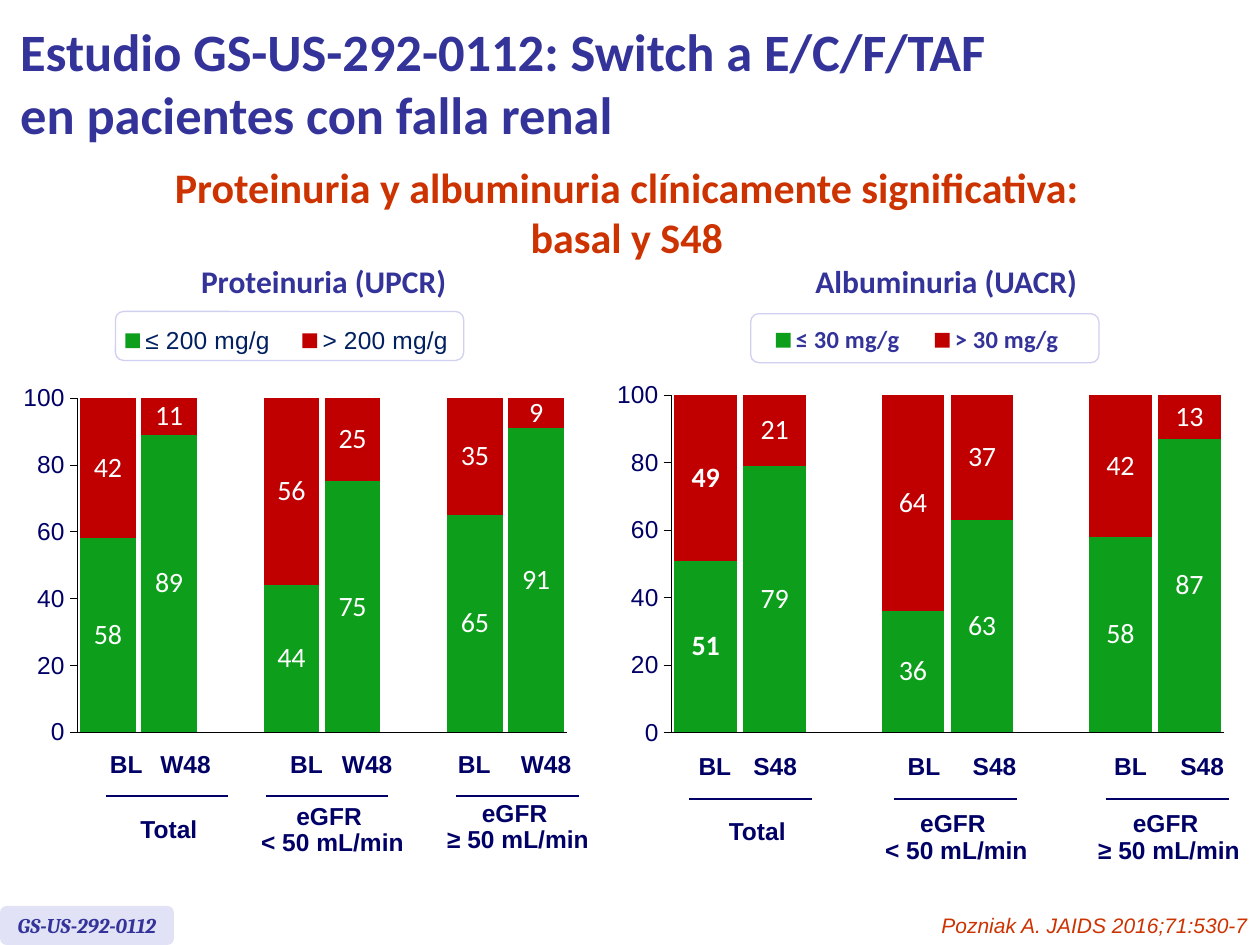
import pptx
import pptx.util
import pptx.chart.data
import pptx.dml.color
import pptx.enum.chart
import pptx.enum.shapes
import pptx.enum.text
import pptx.oxml
import pptx.oxml.ns

Pt = pptx.util.Pt
RGB = pptx.dml.color.RGBColor.from_string
ALIGN = pptx.enum.text.PP_ALIGN
MID = pptx.enum.text.MSO_ANCHOR.MIDDLE
TOP = pptx.enum.text.MSO_ANCHOR.TOP
XL = pptx.enum.chart
qn = pptx.oxml.ns.qn

HUES = {"blue": "333399", "navy": "000066", "deep": "002060", "red": "C00000",
        "green": "0D9F1B", "rust": "CC3300", "pale": "E2E2F6", "edge": "D0D0F0",
        "white": "FFFFFF", "black": "000000"}

# Content
TITLE = "Estudio GS-US-292-0112: Switch a E/C/F/TAF \ven pacientes con falla renal"
LEAD = "Proteinuria y albuminuria clínicamente significativa: basal y S48"
CODE = "GS-US-292-0112"
CITE = "Pozniak A. JAIDS 2016;71:530-7"
GROUPS = [["Total"], ["eGFR ", "< 50 mL/min"], ["eGFR ", "≥ 50 mL/min"]]

# One dict per panel; the x lists hold one place per patient group
PANELS = [
    dict(head="Proteinuria (UPCR)", head_box=(105, 152, 160, 20),
         frame=(66, 178, 199, 28), box=(9.4, 156.6, 321.8, 362.9),
         plot=(0.108, 0.195, 0.869, 0.527), key=(0.15, 0.07, 0.66, 0.07),
         key_font=dict(size=14, name="Arial", color="deep", bold=False),
         series=[("≤ 200 mg/g", "green", [58, 89, None, 44, 75, None, 65, 91]),
                 ("> 200 mg/g", "red", [42, 11, None, 56, 25, None, 35, 9])],
         bold=[], week="W48", base_x=[48.2, 151.2, 247], week_x=[82, 185.8, 288],
         rule_x=[60.5, 152, 260.6], name_x=[60.5, 154, 260],
         name_y=[463, 463, 461.5], tick_y=430, rule_y=455),
    dict(head="Albuminuria (UACR)", head_box=(427, 152, 227.5, 20),
         frame=(429, 179.3, 199, 28), box=(344.2, 170, 363.6, 349.2),
         plot=(0.108, 0.16, 0.869, 0.552), key=(0.23, 0.035, 0.53, 0.07),
         key_font=dict(size=14, name="Calibri", color="blue", bold=True),
         series=[("≤ 30 mg/g", "green", [51, 79, None, 36, 63, None, 58, 87]),
                 ("> 30 mg/g", "red", [49, 21, None, 64, 37, None, 42, 13])],
         bold=[0], week="S48", base_x=[384.5, 504, 622], week_x=[419, 544.3, 663],
         rule_x=[394, 511, 632], name_x=[396.7, 510.5, 632],
         name_y=[464.4, 467.3, 467.3], tick_y=431.3, rule_y=456.5),
]

# Text styles
HEAD = dict(size=18, name="Calibri", color="blue", bold=True)
TICK = dict(size=14, name="Arial", color="navy", bold=True)
LABEL = dict(size=16, name="Calibri", color="white", bold=False)


def style(font, form):
    for key, val in form.items():
        if key == "color":
            font.color.rgb = RGB(HUES[val])
        else:
            setattr(font, key, Pt(val) if key == "size" else val)


def write(shape, lines, form, align=ALIGN.CENTER, space=None, pad=None,
          wrap=True, anchor=TOP):
    frame = shape.text_frame
    frame.word_wrap = wrap
    frame.vertical_anchor = anchor
    if pad is not None:
        for side in ("left", "top", "right", "bottom"):
            setattr(frame, "margin_" + side, Pt(pad))
    frame.text = "\n".join(lines)
    for para in frame.paragraphs:
        para.alignment = align
        if space:
            para.line_spacing = space
        for run in para.runs:
            style(run.font, form)


def text(box, lines, form, **opts):
    write(slide.shapes.add_textbox(*map(Pt, box)), lines, form, **opts)


def round_box(box, fill, edge=None):
    kind = pptx.enum.shapes.MSO_SHAPE.ROUNDED_RECTANGLE
    shape = slide.shapes.add_shape(kind, *map(Pt, box))
    shape.shadow.inherit = False
    shape.fill.solid()
    shape.fill.fore_color.rgb = RGB(HUES[fill])
    if edge:
        shape.line.color.rgb = RGB(HUES[edge])
        shape.line.width = Pt(0.75)
    else:
        shape.line.fill.background()
    return shape


def rule(x, y, width):
    line = slide.shapes.add_connector(pptx.enum.shapes.MSO_CONNECTOR.STRAIGHT,
                                      Pt(x), Pt(y), Pt(x + width), Pt(y))
    line.line.color.rgb = RGB(HUES["navy"])
    line.line.width = Pt(1)
    props = line.element.find(qn("p:spPr"))
    props.append(pptx.oxml.parse_xml(
        "<a:effectLst %s/>" % pptx.oxml.ns.nsdecls("a")))


def layout(spot, inner=False):
    tags = [("layoutTarget", "inner")] if inner else []
    tags += [("xMode", "edge"), ("yMode", "edge")] + list(zip("xywh", spot))
    body = "".join('<c:%s val="%s"/>' % tag for tag in tags)
    return pptx.oxml.parse_xml(
        "<c:layout %s><c:manualLayout>%s</c:manualLayout></c:layout>"
        % (pptx.oxml.ns.nsdecls("c"), body))


def place(chart, panel):
    area = chart.element.find(".//" + qn("c:plotArea"))
    for old in area.findall(qn("c:layout")):
        area.remove(old)
    area.insert(0, layout(panel["plot"], inner=True))
    spot = chart.element.find(".//" + qn("c:legendPos"))
    spot.addnext(layout(panel["key"]))


def draw_chart(panel):
    data = pptx.chart.data.CategoryChartData()
    data.categories = [str(n) for n in range(1, 9)]
    for name, hue, vals in panel["series"]:
        data.add_series(name, vals)
    chart = slide.shapes.add_chart(XL.XL_CHART_TYPE.COLUMN_STACKED,
                                   *map(Pt, panel["box"]), data).chart
    style(chart.font, dict(size=18, name="Arial", color="black"))
    chart.has_title = False
    # Legend
    chart.has_legend = True
    chart.legend.position = XL.XL_LEGEND_POSITION.BOTTOM
    chart.legend.include_in_layout = False
    style(chart.legend.font, panel["key_font"])
    place(chart, panel)
    # Axes
    cat, val = chart.category_axis, chart.value_axis
    for axis in (cat, val):
        axis.has_major_gridlines = False
        axis.minor_tick_mark = XL.XL_TICK_MARK.NONE
        axis.format.line.color.rgb = RGB(HUES["black"])
        axis.format.line.width = Pt(0.25)
    cat.major_tick_mark = XL.XL_TICK_MARK.NONE
    cat.tick_label_position = XL.XL_TICK_LABEL_POSITION.NONE
    val.major_tick_mark = XL.XL_TICK_MARK.OUTSIDE
    val.minimum_scale, val.maximum_scale, val.major_unit = 0, 100, 20
    style(val.tick_labels.font, dict(size=14, color="navy"))
    # Bars
    plot = chart.plots[0]
    plot.gap_width, plot.overlap, plot.vary_by_categories = 10, 100, False
    for bar, (name, hue, vals) in zip(plot.series, panel["series"]):
        bar.format.fill.solid()
        bar.format.fill.fore_color.rgb = RGB(HUES[hue])
        bar.data_labels.show_value = True
        bar.data_labels.position = XL.XL_LABEL_POSITION.CENTER
        style(bar.data_labels.font, LABEL)
        for spot in panel["bold"]:
            label = bar.points[spot].data_label
            style(label.font, dict(LABEL, bold=True))
            label.position = XL.XL_LABEL_POSITION.CENTER


def draw_panel(panel):
    text(panel["head_box"], [panel["head"]], HEAD, space=0.9, pad=7.2, anchor=MID)
    round_box(panel["frame"], "white", "edge")
    draw_chart(panel)
    flat = dict(space=0.9, pad=0, wrap=False)
    for n, lines in enumerate(GROUPS):
        for key, word in (("base_x", "BL"), ("week_x", panel["week"])):
            text((panel[key][n], panel["tick_y"], 48, 28), [word], TICK, **flat)
        rule(panel["rule_x"][n], panel["rule_y"], 70)
        # Wide enough for the longest group name on one line
        text((panel["name_x"][n] - 12, panel["name_y"][n] - 6, 96, 35), lines,
             TICK, anchor=MID, **flat)


deck = pptx.Presentation()
deck.slide_width, deck.slide_height = Pt(720), Pt(540)
slide = deck.slides.add_slide(deck.slide_layouts[5])

# Title
title = slide.shapes.title
title.left, title.top, title.width, title.height = map(Pt, (4.3, 3.6, 715.7, 87))
write(title, [TITLE], dict(HEAD, size=30), align=ALIGN.LEFT, anchor=MID)

# Charts with their headings and group names
for panel in PANELS:
    draw_panel(panel)

# Subtitle, study tag and citation
text((76.3, 88.6, 563.8, 65.5), [LEAD], dict(HEAD, size=24, color="rust"))
write(round_box((0, 517.7, 99.4, 22.3), "pale"), [CODE],
      dict(size=12, name="Cambria", color="blue", bold=True, italic=True),
      wrap=False, anchor=MID)
text((386, 517.7, 334, 21.6), [CITE],
     dict(size=12, name="Arial", color="rust", italic=True), align=ALIGN.RIGHT)

deck.save("out.pptx")
